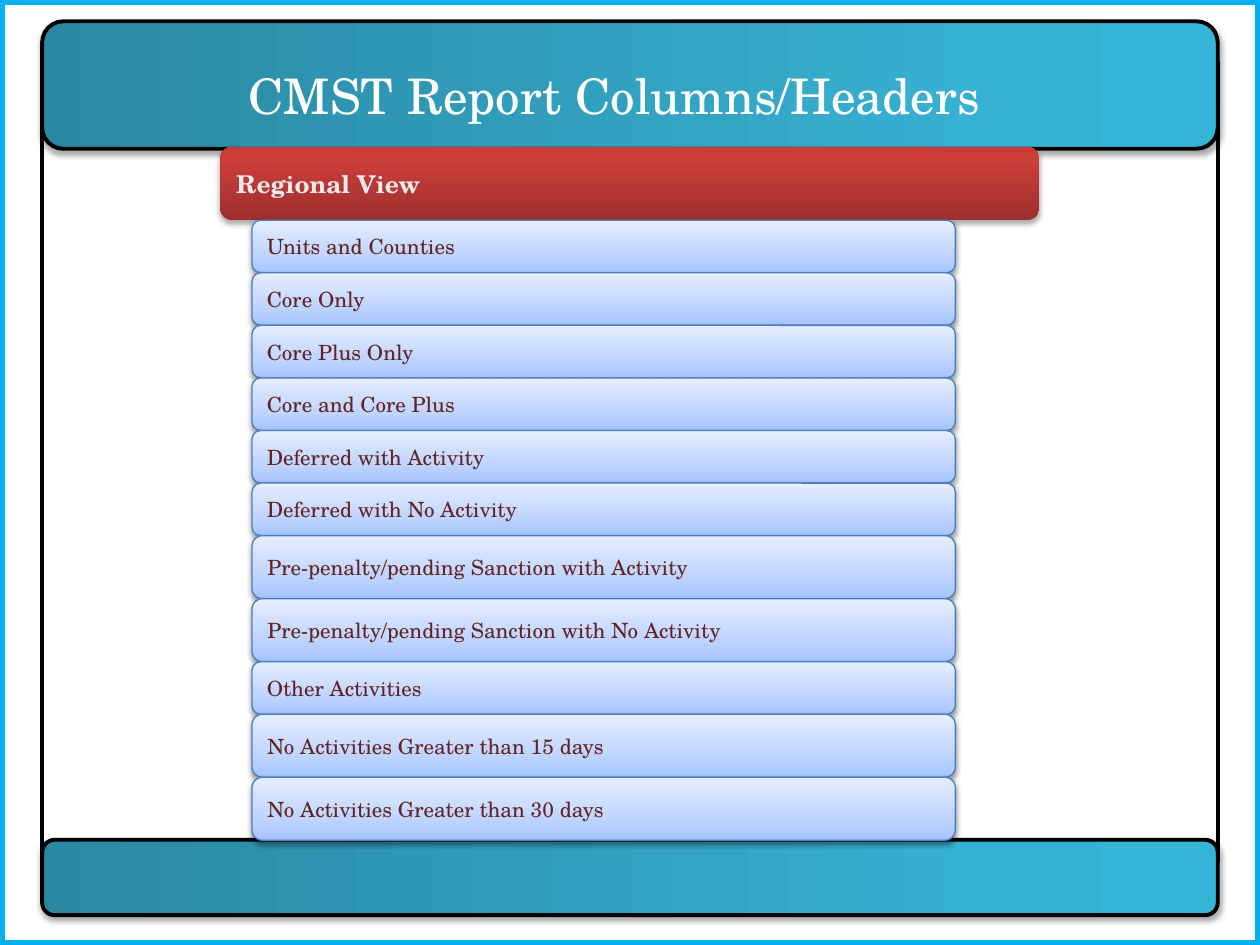
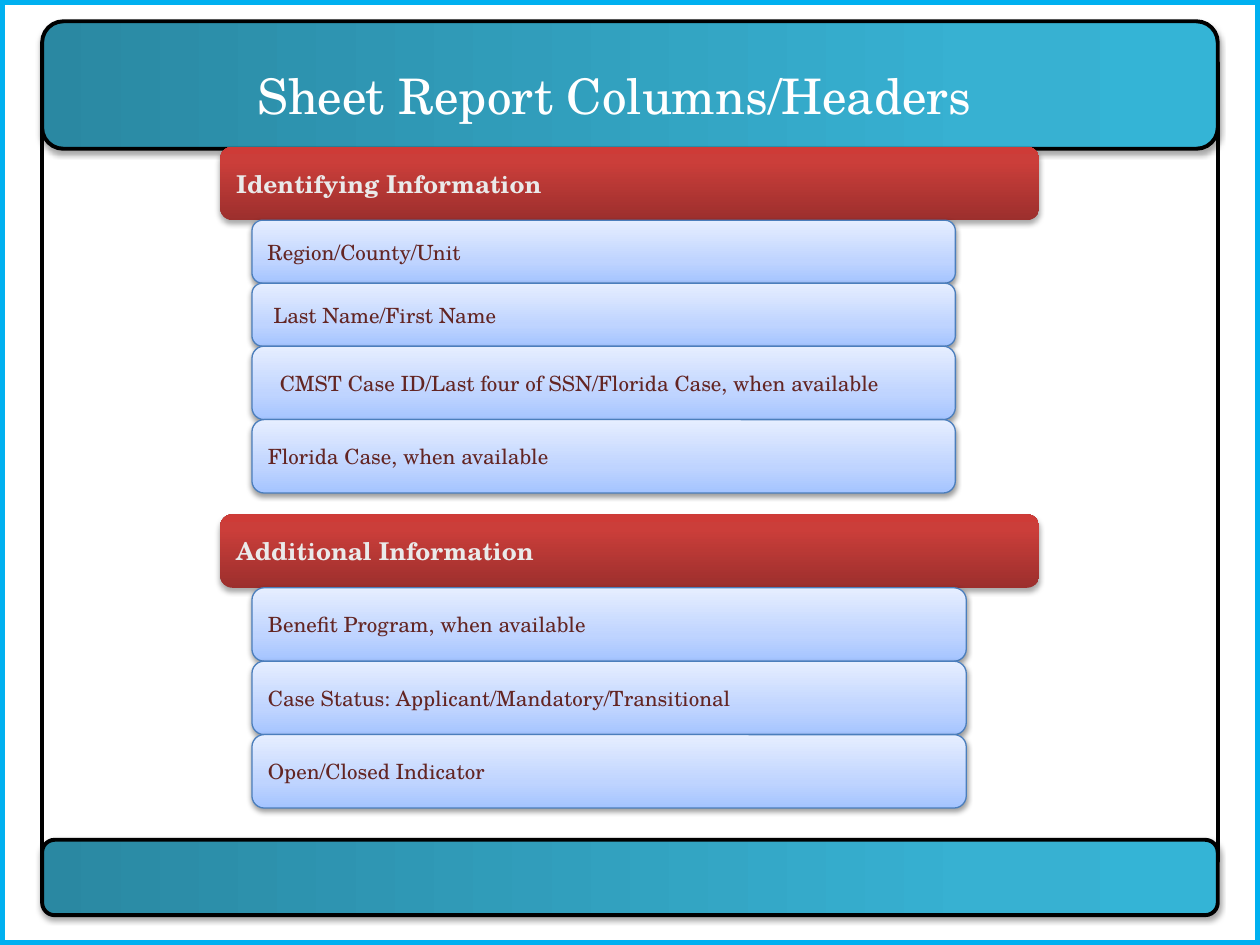
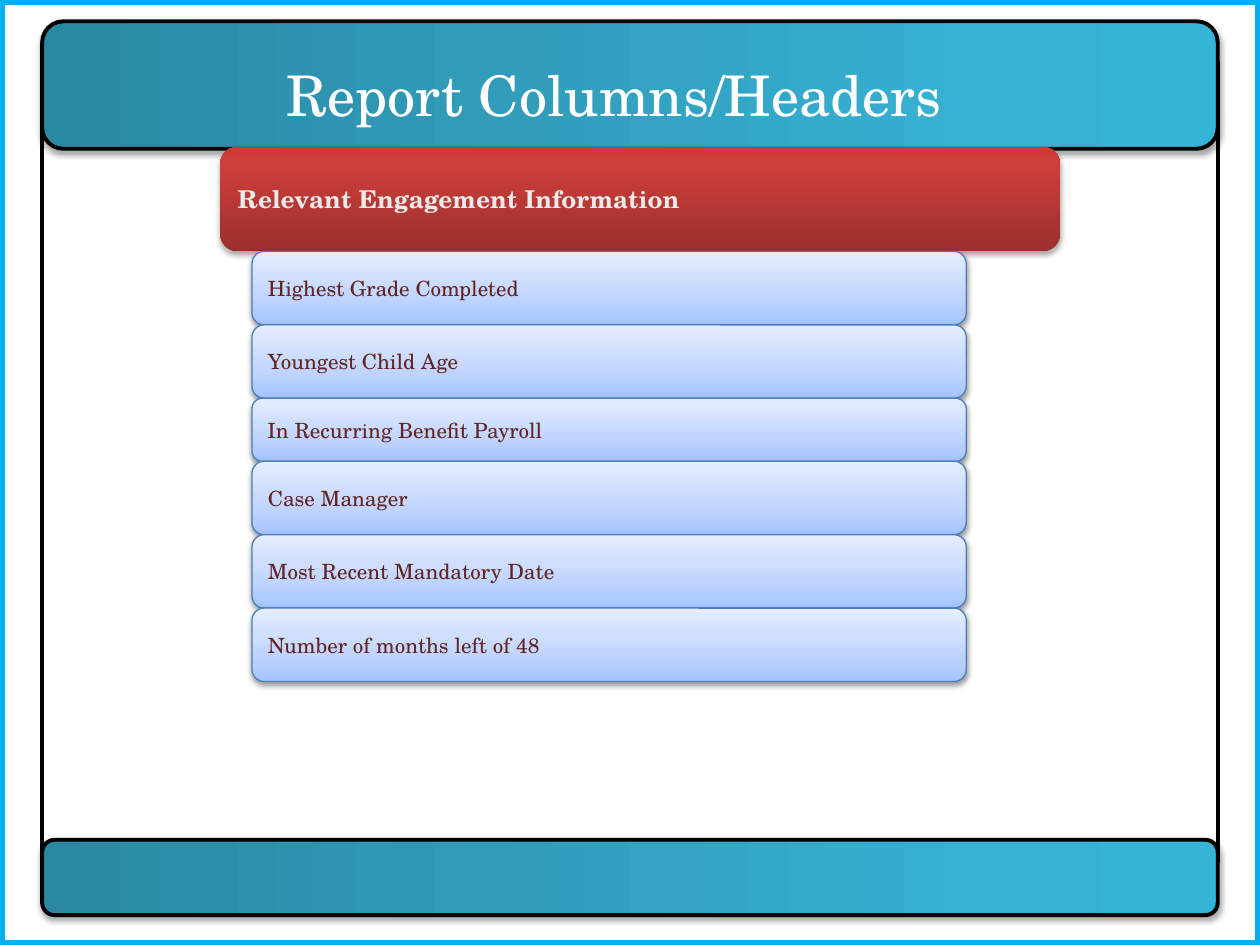
from dataclasses import dataclass

from lxml.etree import SubElement
from pptx import Presentation
from pptx.dml.color import RGBColor
from pptx.enum.shapes import MSO_SHAPE, PP_PLACEHOLDER
from pptx.enum.text import MSO_ANCHOR, MSO_AUTO_SIZE, PP_ALIGN
from pptx.oxml.ns import qn
from pptx.shapes.autoshape import Shape
from pptx.slide import Slide, SlideLayout
from pptx.text.text import TextFrame
from pptx.util import Cm, Pt

FONT = "TeX Gyre Schola"
WHITE, BLACK, SKY = "FFFFFF", "000000", "00B0F0"
HEADING_TEXT, ROW_TEXT, ROW_LINE = "EAEAEA", "632523", "4B7EBC"

SLIDE_WIDTH, SLIDE_HEIGHT = 25.4, 19.05
FRAME_LEFT, FRAME_WIDTH = 0.85, 23.7
HEADING_LEFT, ROW_LEFT = 4.44, 5.08
GROUP_TOP = 2.96
LOW, MEDIUM, TALL = 1.06, 1.27, 1.48
NARROW_ROW, WIDE_ROW = 14.18, 14.4
TEXT_INSET = 0.25


@dataclass(frozen=True)
class Gradient:
    stops: tuple[tuple[int, str], ...]
    angle: int


@dataclass(frozen=True)
class Shadow:
    opacity: int
    distance: float


@dataclass(frozen=True)
class Row:
    text: str
    height: float = TALL
    indent: float = 0


@dataclass(frozen=True)
class Group:
    heading: str
    rows: tuple[Row, ...]
    row_width: float = WIDE_ROW
    top: float = GROUP_TOP
    heading_width: float = 16.51
    heading_height: float = TALL


@dataclass(frozen=True)
class Page:
    title: str
    groups: tuple[Group, ...]
    title_size: int = 28


TEAL = Gradient(((0, "2A88A2"), (80, "37B1D2"), (100, "34B4D6")), 0)
RED = Gradient(((0, "9C2F2D"), (80, "CB3E3A"), (100, "CE3B37")), 90)
BLUE = Gradient(((0, "A4C4FF"), (35, "BFD4FF"), (100, "E6EEFF")), 90)
STRONG_SHADOW = Shadow(35, 1.8)
ROW_SHADOW = Shadow(38, 1.6)

PAGES = (
    Page("CMST Report Columns/Headers", (
        Group("Regional View", (
            Row("Units and Counties", LOW),
            Row("Core Only", LOW),
            Row("Core Plus Only", LOW),
            Row("Core and Core Plus", LOW),
            Row("Deferred with Activity", LOW),
            Row("Deferred with No Activity", LOW),
            Row("Pre-penalty/pending Sanction with Activity", MEDIUM),
            Row("Pre-penalty/pending Sanction with No Activity", MEDIUM),
            Row("Other Activities", LOW),
            Row("No Activities Greater than 15 days", MEDIUM),
            Row("No Activities Greater than 30 days", MEDIUM),
        ), NARROW_ROW),
    )),
    Page("Sheet Report Columns/Headers", (
        Group("Identifying Information", (
            Row("Region/County/Unit", MEDIUM),
            Row("Last Name/First Name", MEDIUM, 0.12),
            Row("CMST Case ID/Last four of SSN/Florida Case, when available", indent=0.24),
            Row("Florida Case, when available"),
        ), NARROW_ROW),
        Group("Additional Information", (
            Row("Benefit Program, when available"),
            Row("Case Status: Applicant/Mandatory/Transitional"),
            Row("Open/Closed Indicator"),
        ), top=10.37),
    )),
    Page("Report Columns/Headers", (
        Group("Relevant Engagement Information", (
            Row("Highest Grade Completed"),
            Row("Youngest Child Age"),
            Row("In Recurring Benefit Payroll", MEDIUM),
            Row("Case Manager"),
            Row("Most Recent Mandatory Date"),
            Row("Number of months left of 48"),
        ), heading_width=16.93, heading_height=2.11),
    ), 32),
)


def color(value: str) -> RGBColor:
    return RGBColor.from_string(value)


def apply_gradient(shape: Shape, gradient: Gradient) -> None:
    fill = shape.fill
    fill.gradient()
    fill.gradient_angle = gradient.angle
    stop_list = shape.element.spPr.find(qn("a:gradFill")).find(qn("a:gsLst"))
    for stop in list(stop_list):
        stop_list.remove(stop)
    for position, value in gradient.stops:
        stop = SubElement(stop_list, qn("a:gs"), pos=str(position * 1000))
        SubElement(stop, qn("a:srgbClr"), val=value)


def apply_shadow(shape: Shape, shadow: Shadow) -> None:
    effects = shape.element.spPr.find(qn("a:effectLst"))
    outer = SubElement(effects, qn("a:outerShdw"), blurRad=str(Pt(3.1)),
                       dist=str(Pt(shadow.distance)), dir="5400000", rotWithShape="0")
    shade = SubElement(outer, qn("a:srgbClr"), val=BLACK)
    SubElement(shade, qn("a:alpha"), val=str(shadow.opacity * 1000))


def add_box(slide: Slide, kind: MSO_SHAPE, left: float, top: float, width: float,
            height: float, fill: str | Gradient, line: str | None = None,
            line_width: float = 0, shadow: Shadow | None = None) -> Shape:
    shape = slide.shapes.add_shape(kind, Cm(left), Cm(top), Cm(width), Cm(height))
    shape.shadow.inherit = False
    if isinstance(fill, Gradient):
        apply_gradient(shape, fill)
    else:
        shape.fill.solid()
        shape.fill.fore_color.rgb = color(fill)
    if line:
        shape.line.color.rgb = color(line)
        shape.line.width = Pt(line_width)
    else:
        shape.line.fill.background()
    if shadow:
        apply_shadow(shape, shadow)
    return shape


def set_text(text_frame: TextFrame, text: str, size: int, text_color: str,
             bold: bool = False, align: PP_ALIGN = PP_ALIGN.LEFT) -> None:
    text_frame.text = text
    text_frame.word_wrap = True
    text_frame.vertical_anchor = MSO_ANCHOR.MIDDLE
    paragraph = text_frame.paragraphs[0]
    paragraph.alignment = align
    font = paragraph.runs[0].font
    font.name, font.size, font.bold = FONT, Pt(size), bold
    font.color.rgb = color(text_color)


def add_frame(slide: Slide, layout: SlideLayout) -> None:
    """Draw the border and bands, then move them into the layout that every slide uses."""
    for placeholder in list(layout.placeholders):
        if placeholder.placeholder_format.type != PP_PLACEHOLDER.TITLE:
            placeholder.element.getparent().remove(placeholder.element)
    parts = [
        add_box(slide, MSO_SHAPE.RECTANGLE, 0, 0, SLIDE_WIDTH, SLIDE_HEIGHT, WHITE, SKY, 6),
        add_box(slide, MSO_SHAPE.FLOWCHART_PROCESS, FRAME_LEFT, 1.27, FRAME_WIDTH, 16.09,
                WHITE, BLACK, 2.25),
    ]
    for top, height in ((0.43, 2.57), (16.93, 1.52)):
        parts.append(add_box(slide, MSO_SHAPE.FLOWCHART_ALTERNATE_PROCESS, FRAME_LEFT, top,
                             FRAME_WIDTH, height, TEAL, BLACK, 2.25, STRONG_SHADOW))
    for index, part in enumerate(parts, start=2):
        layout.shapes.element.insert(index, part.element)


def add_title(slide: Slide, page: Page) -> None:
    title = slide.shapes.title
    title.left, title.top, title.width, title.height = Cm(4.44), Cm(1.27), Cm(15.88), Cm(1.27)
    set_text(title.text_frame, page.title, page.title_size, WHITE, align=PP_ALIGN.CENTER)
    title.text_frame.auto_size = MSO_AUTO_SIZE.NONE


def add_group(slide: Slide, group: Group) -> None:
    heading = add_box(slide, MSO_SHAPE.FLOWCHART_ALTERNATE_PROCESS, HEADING_LEFT, group.top,
                      group.heading_width, group.heading_height, RED, shadow=STRONG_SHADOW)
    set_text(heading.text_frame, group.heading, 14, HEADING_TEXT, bold=True)
    top = group.top + group.heading_height
    for row in group.rows:
        box = add_box(slide, MSO_SHAPE.ROUNDED_RECTANGLE, ROW_LEFT, top, group.row_width,
                      row.height, BLUE, ROW_LINE, 0.75, ROW_SHADOW)
        set_text(box.text_frame, row.text, 12, ROW_TEXT)
        box.text_frame.margin_left = Cm(TEXT_INSET + row.indent)
        top += row.height


def main() -> None:
    presentation = Presentation()
    presentation.slide_width, presentation.slide_height = Cm(SLIDE_WIDTH), Cm(SLIDE_HEIGHT)
    layout = presentation.slide_layouts.get_by_name("Title Only")
    for number, page in enumerate(PAGES):
        slide = presentation.slides.add_slide(layout)
        if number == 0:
            add_frame(slide, layout)
        add_title(slide, page)
        for group in page.groups:
            add_group(slide, group)
    presentation.save("out.pptx")


if __name__ == "__main__":
    main()
